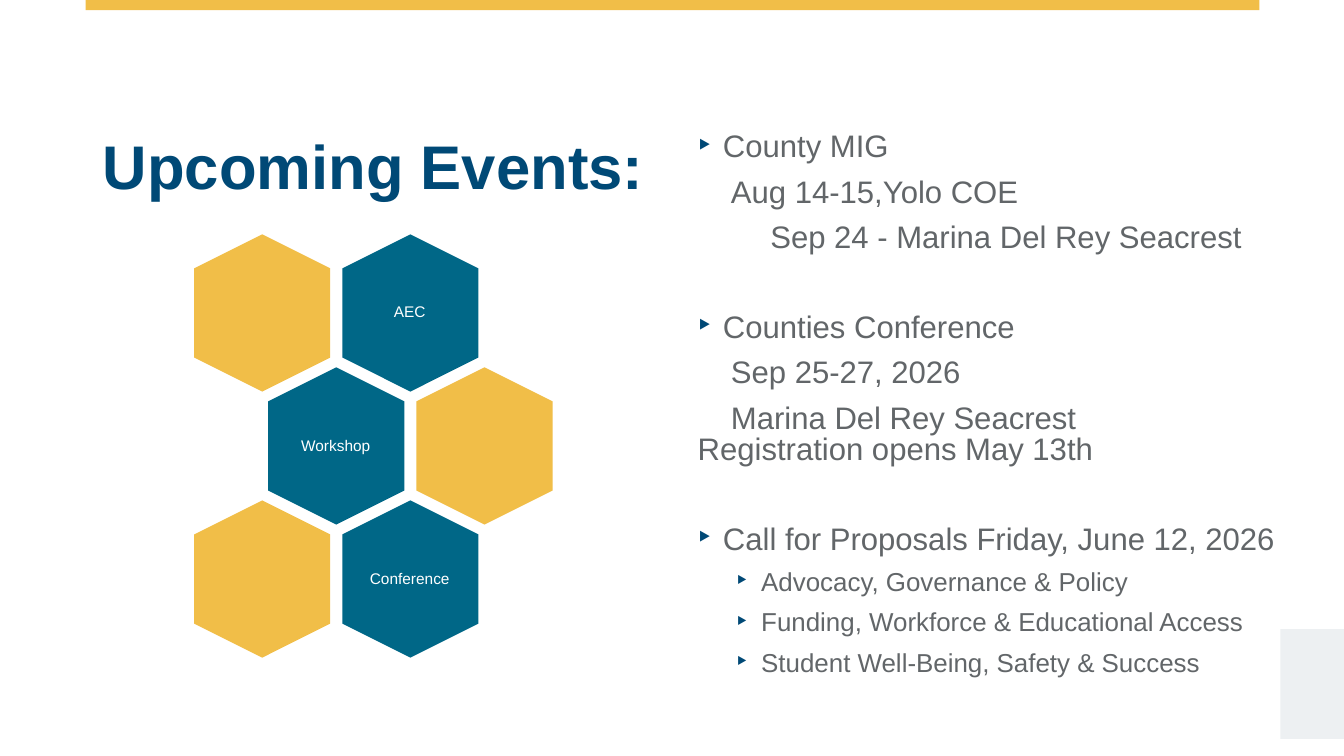
from pptx import Presentation
from pptx.dml.color import RGBColor
from pptx.enum.shapes import MSO_SHAPE
from pptx.enum.text import MSO_ANCHOR, MSO_AUTO_SIZE, PP_ALIGN
from pptx.oxml.ns import qn
from pptx.util import Inches, Pt
from lxml.etree import SubElement

COLORS = {"navy": "004976", "teal": "006787", "gold": "F1BE48",
          "mist": "EDF0F2", "gray": "626669", "white": "FFFFFF"}


def add_block(kind, left, top, width, height, color):
    """Add a filled preset shape without outline or shadow."""
    block = page.shapes.add_shape(kind, Inches(left), Inches(top), Inches(width), Inches(height))
    block.shadow.inherit = False
    block.fill.solid()
    block.fill.fore_color.rgb = RGBColor.from_string(COLORS[color])
    block.line.fill.background()
    return block


def add_span(para, text, size, color, bold=False):
    span = para.add_run()
    span.text = text
    span.font.name = "Arial"
    span.font.size = Pt(size)
    span.font.bold = bold
    span.font.color.rgb = RGBColor.from_string(COLORS[color])


deck = Presentation()
deck.slide_width, deck.slide_height = Inches(13.33), Inches(7.5)
page = deck.slides.add_slide(deck.slide_layouts[1])
title, events = page.placeholders

# Decoration
add_block(MSO_SHAPE.RECTANGLE, 0.85, 0, 11.64, 0.1, "gold")
add_block(MSO_SHAPE.RECTANGLE, 12.7, 6.24, 0.63, 1.09, "mist")

# Title
title.left, title.top, title.width, title.height = map(Inches, (0.92, 0.4, 11.5, 1.7))
frame = title.text_frame
frame.auto_size = MSO_AUTO_SIZE.NONE
frame.vertical_anchor = MSO_ANCHOR.BOTTOM
frame.margin_left = frame.margin_right = frame.margin_bottom = Inches(0.1)
frame.margin_top = 0
para = frame.paragraphs[0]
para.alignment = PP_ALIGN.LEFT
para.line_spacing = 0.8
add_span(para, "Upcoming Events:", 44, "navy", bold=True)

# Honeycomb: each row is a pair of hexagons, the middle row shifted by half a step
STEP_X, STEP_Y = 1.47, 1.32
honeycomb = [("", "AEC"), ("Workshop", ""), ("", "Conference")]
for row, labels in enumerate(honeycomb):
    for column, label in enumerate(labels):
        left = 1.82 + STEP_X * (column + row % 2 / 2)
        top = 2.43 + STEP_Y * row
        hexagon = add_block(MSO_SHAPE.HEXAGON, left, top, 1.56, 1.35, "teal" if label else "gold")
        hexagon.rotation = 90
        if not label:
            continue
        box = page.shapes.add_textbox(Inches(left + 0.31), Inches(top + 0.14),
                                      Inches(0.93), Inches(1.07))
        frame = box.text_frame
        frame.word_wrap = True
        frame.vertical_anchor = MSO_ANCHOR.MIDDLE
        frame.margin_left = frame.margin_right = Inches(0.05)
        frame.margin_top = frame.margin_bottom = Inches(0.05)
        para = frame.paragraphs[0]
        para.alignment = PP_ALIGN.CENTER
        para.line_spacing = 0.9
        add_span(para, label, 11, "white")

# Event list: each style is level, size, left indent, bullet, alignment
STYLES = {
    "event": (0, 22.2, 0.25, True, PP_ALIGN.LEFT),
    "detail": (0, 22.2, 0.33, False, PP_ALIGN.LEFT),
    "centered": (0, 22.2, 0.06, False, PP_ALIGN.CENTER),
    "plain": (0, 22.2, 0, False, PP_ALIGN.LEFT),
    "topic": (1, 18.5, 0.63, True, PP_ALIGN.LEFT),
}
NORMAL_GAP, EVENT_GAP = 10.4, 41.9
lines = [
    ("County MIG", "event", 0),
    ("Aug 14-15,Yolo COE", "detail", NORMAL_GAP),
    ("Sep 24 - Marina Del Rey Seacrest", "centered", NORMAL_GAP),
    ("Counties Conference", "event", EVENT_GAP),
    ("Sep 25-27, 2026", "detail", NORMAL_GAP),
    ("Marina Del Rey Seacrest", "detail", NORMAL_GAP),
    ("Registration opens May 13th", "plain", 0),
    ("Call for Proposals Friday, June 12, 2026", "event", EVENT_GAP),
    ("Advocacy, Governance & Policy", "topic", NORMAL_GAP),
    ("Funding, Workforce & Educational Access", "topic", NORMAL_GAP),
    ("Student Well-Being, Safety & Success", "topic", NORMAL_GAP),
]
events.left, events.top, events.width, events.height = map(Inches, (6.82, 0.4, 6.26, 7.1))
frame = events.text_frame
frame.auto_size = MSO_AUTO_SIZE.NONE
frame.vertical_anchor = MSO_ANCHOR.TOP
frame.margin_left = frame.margin_right = frame.margin_bottom = Inches(0.1)
frame.margin_top = Inches(0.92)
for index, (text, style, gap) in enumerate(lines):
    level, size, indent, bulleted, alignment = STYLES[style]
    para = frame.add_paragraph() if index else frame.paragraphs[0]
    para.level = level
    para.alignment = alignment
    para.line_spacing = 0.83
    para.space_before = Pt(gap)
    para.space_after = Pt(0)
    properties = para._p.get_or_add_pPr()
    properties.set("marL", str(Inches(indent)))
    properties.set("indent", str(Inches(-0.25 if bulleted else 0)))
    if bulleted:
        bullet_color = SubElement(properties, qn("a:buClr"))
        SubElement(bullet_color, qn("a:srgbClr"), val=COLORS["navy"])
        SubElement(properties, qn("a:buSzPct"), val="120000")
        SubElement(properties, qn("a:buFont"), typeface="Arial")
        SubElement(properties, qn("a:buChar"), char="‣")
    else:
        SubElement(properties, qn("a:buNone"))
    add_span(para, text, size, "gray")

deck.save("out.pptx")
